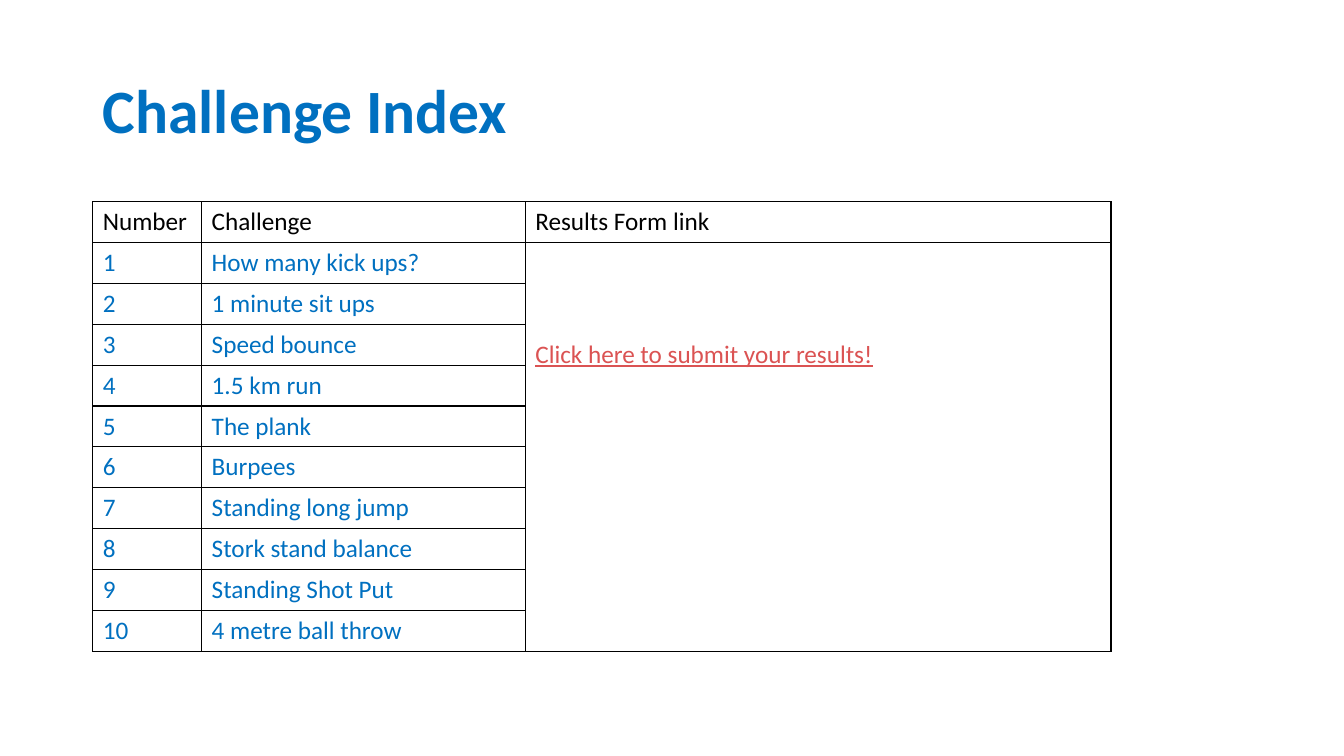
import lxml.etree
import pptx
import pptx.dml.color
import pptx.enum.text
import pptx.oxml.ns
import pptx.util

FONT = "Calibri"
BLUE, BLACK, RED = "0070C0", "000000", "DB5353"
LEFT = 0.92
COLUMN_WIDTHS = (1.08, 3.21, 5.81)
ROW_HEIGHT = 4.46 / 11
LINK_TOP = 0.96
HEADINGS = ("Number", "Challenge", "Results Form link")
CHALLENGES = (
    "How many kick ups?",
    "1 minute sit ups",
    "Speed bounce",
    "1.5 km run",
    "The plank",
    "Burpees",
    "Standing long jump",
    "Stork stand balance",
    "Standing Shot Put",
    "4 metre ball throw",
)


def color(hex_value):
    """Turn a hex string into a colour."""
    return pptx.dml.color.RGBColor.from_string(hex_value)


def write(text_frame, text, size, hex_value, bold=False, underline=False):
    """Put one formatted paragraph in a text frame and return it."""
    text_frame.text = text
    paragraph = text_frame.paragraphs[0]
    font = paragraph.font
    font.name, font.size = FONT, pptx.util.Pt(size)
    font.bold, font.underline = bold, underline
    font.color.rgb = color(hex_value)
    return paragraph


def add_title(slide, text):
    """Place and format the title placeholder."""
    title = slide.shapes.title
    title.left, title.top, title.width, title.height = map(
        pptx.util.Inches, (LEFT, 0.4, 11.5, 1.45))
    frame = title.text_frame
    frame.auto_size = pptx.enum.text.MSO_AUTO_SIZE.NONE
    frame.vertical_anchor = pptx.enum.text.MSO_ANCHOR.MIDDLE
    paragraph = write(frame, text, 44, BLUE, bold=True)
    paragraph.alignment = pptx.enum.text.PP_ALIGN.LEFT
    paragraph.line_spacing = 0.9


def format_cell(cell):
    """Give a cell thin black borders and no fill."""
    qn = pptx.oxml.ns.qn
    properties = cell._tc.get_or_add_tcPr()
    for side in ("a:lnL", "a:lnR", "a:lnT", "a:lnB"):
        line = lxml.etree.SubElement(properties, qn(side), w=str(pptx.util.Pt(1)))
        fill = lxml.etree.SubElement(line, qn("a:solidFill"))
        lxml.etree.SubElement(fill, qn("a:srgbClr"), val=BLACK)
    cell.fill.background()


def add_index_table(slide):
    """Add the table of challenges with one tall cell for the link."""
    row_count = len(CHALLENGES) + 1
    table = slide.shapes.add_table(
        row_count, len(HEADINGS), *map(pptx.util.Inches, (
            LEFT, 2, sum(COLUMN_WIDTHS), ROW_HEIGHT * row_count))).table
    table.first_row = table.horz_banding = False
    for column, width in zip(table.columns, COLUMN_WIDTHS):
        column.width = pptx.util.Inches(width)
    for row in table.rows:
        row.height = pptx.util.Inches(ROW_HEIGHT)
    for cell in table.iter_cells():
        format_cell(cell)

    for column, heading in enumerate(HEADINGS):
        write(table.cell(0, column).text_frame, heading, 18, BLACK)
    for number, challenge in enumerate(CHALLENGES, 1):
        for column, text in enumerate((str(number), challenge)):
            write(table.cell(number, column).text_frame, text, 18, BLUE)

    link_cell = table.cell(1, 2)
    link_cell.merge(table.cell(row_count - 1, 2))
    link_cell.margin_top = pptx.util.Inches(LINK_TOP)
    write(link_cell.text_frame, "Click here to submit your results!", 18, RED,
          underline=True)


def main():
    """Build and save the slide."""
    presentation = pptx.Presentation()
    presentation.slide_width = pptx.util.Inches(13.33)
    presentation.slide_height = pptx.util.Inches(7.5)
    slide = presentation.slides.add_slide(presentation.slide_layouts[5])
    add_title(slide, "Challenge Index")
    add_index_table(slide)
    presentation.save("out.pptx")


if __name__ == "__main__":
    main()
